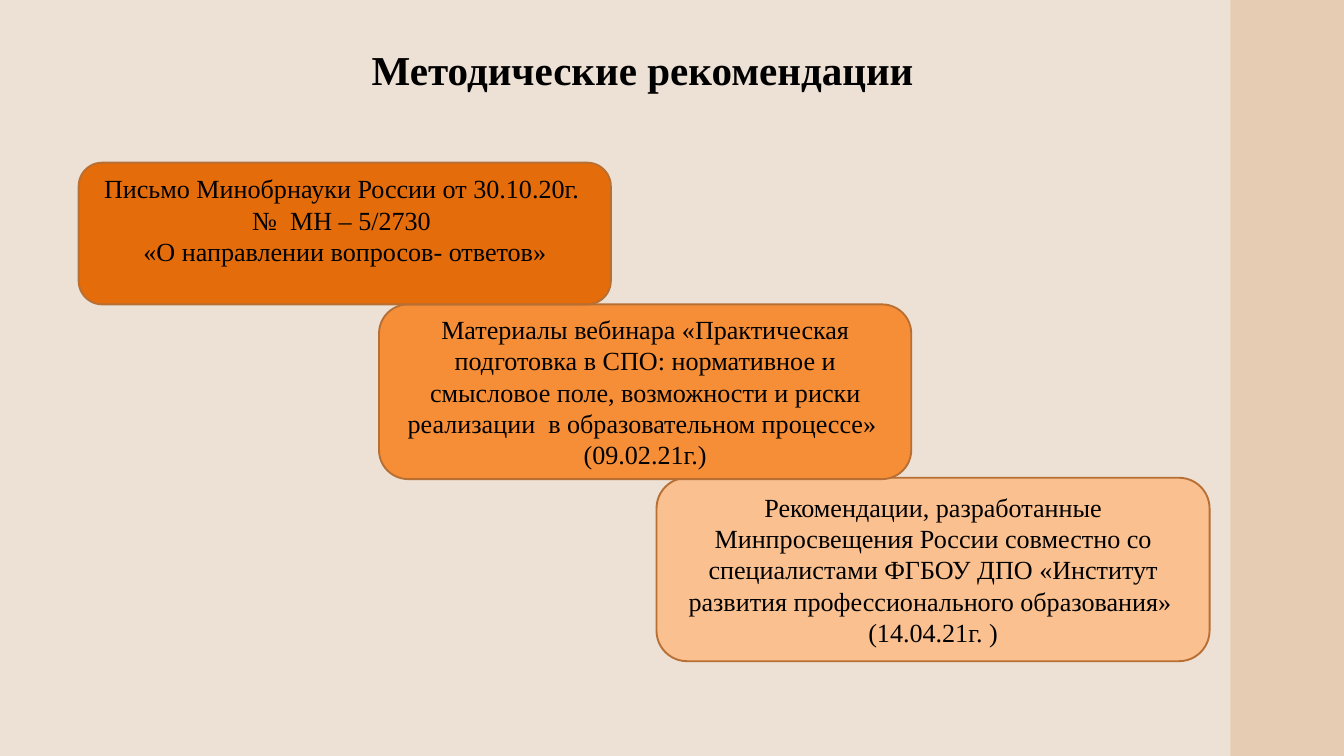
from typing import NamedTuple

from pptx import Presentation
from pptx.dml.color import RGBColor
from pptx.enum.shapes import MSO_SHAPE
from pptx.enum.text import MSO_ANCHOR, PP_ALIGN
from pptx.util import Inches, Pt

RECT = MSO_SHAPE.RECTANGLE
ROUND = MSO_SHAPE.ROUNDED_RECTANGLE
TOP = MSO_ANCHOR.TOP
MIDDLE = MSO_ANCHOR.MIDDLE
CENTER = PP_ALIGN.CENTER

FONT = "Times New Roman"
INK = "000000"
EDGE = "B76F34"
PAPER = "EDE0D4"
SAND = "E6CCB2"


class Card(NamedTuple):
    left: float
    top: float
    width: float
    height: float
    fill: str
    anchor: MSO_ANCHOR
    lines: tuple[str, ...]


# Back to front: each card overlaps the one below it.
CARDS = (
    Card(9.77, 7.11, 8.23, 2.73, "FAC090", MIDDLE, (
        "Рекомендации, разработанные Минпросвещения России совместно со "
        "специалистами ФГБОУ ДПО «Институт развития профессионального "
        "образования» ",
        "(14.04.21г. )")),
    Card(5.64, 4.53, 7.92, 2.6, "F68E38", MIDDLE, (
        "Материалы вебинара «Практическая подготовка в СПО: нормативное и "
        "смысловое поле, возможности и риски реализации  в образовательном "
        "процессе» ",
        "(09.02.21г.)")),
    Card(1.17, 2.42, 7.92, 2.11, "E46C0A", TOP, (
        "Письмо Минобрнауки России от 30.10.20г. ",
        "№  MH – 5/2730 ",
        "«О направлении вопросов- ответов»")),
)


def paint(fill, color: str) -> None:
    fill.solid()
    fill.fore_color.rgb = RGBColor.from_string(color)


def write(frame, text: str, size: int, bold: bool = False) -> None:
    """Fill a frame with centred, wrapped text in the slide's font."""
    frame.word_wrap = True
    frame.text = text
    for para in frame.paragraphs:
        para.alignment = CENTER
        for run in para.runs:
            run.font.name = FONT
            run.font.size = Pt(size)
            run.font.bold = bold
            run.font.color.rgb = RGBColor.from_string(INK)


def add_band(slide) -> None:
    band = slide.shapes.add_shape(
        RECT, Inches(18.31), 0, Inches(1.69), Inches(11.25))
    band.shadow.inherit = False
    paint(band.fill, SAND)
    band.line.fill.background()


def add_title(slide, text: str) -> None:
    box = slide.shapes.add_textbox(
        Inches(1.5), Inches(0.29), Inches(16.13), Inches(0.98))
    frame = box.text_frame
    frame.margin_left = frame.margin_right = 0
    frame.margin_top = frame.margin_bottom = 0
    write(frame, text, 44, bold=True)
    frame.paragraphs[0].line_spacing = 1.5


def add_card(slide, card: Card) -> None:
    shape = slide.shapes.add_shape(
        ROUND, Inches(card.left), Inches(card.top),
        Inches(card.width), Inches(card.height))
    shape.shadow.inherit = False
    paint(shape.fill, card.fill)
    paint(shape.line.fill, EDGE)
    shape.line.width = Pt(2)
    shape.text_frame.vertical_anchor = card.anchor
    write(shape.text_frame, "\n".join(card.lines), 28)


def main() -> None:
    deck = Presentation()
    deck.slide_width = Inches(20)
    deck.slide_height = Inches(11.25)
    slide = deck.slides.add_slide(deck.slide_layouts[6])
    paint(slide.background.fill, PAPER)
    add_band(slide)
    add_title(slide, "Методические рекомендации")
    for card in CARDS:
        add_card(slide, card)
    deck.save("out.pptx")


if __name__ == "__main__":
    main()
